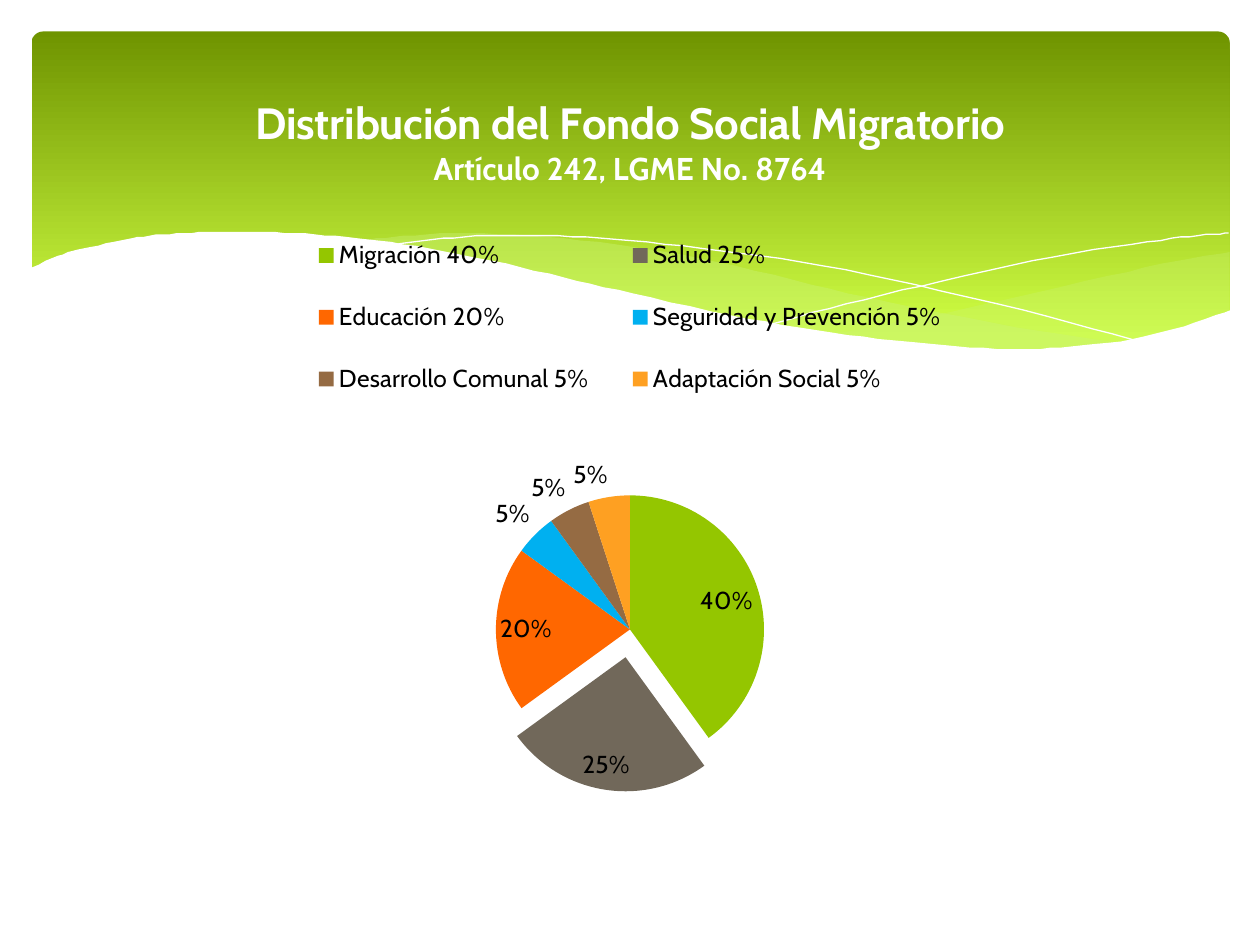
from dataclasses import dataclass

from lxml import etree
from pptx import Presentation
from pptx import util as u
from pptx.chart.data import CategoryChartData
from pptx.dml.color import RGBColor
from pptx.enum import chart as ch
from pptx.enum import shapes
from pptx.oxml import parse_xml
from pptx.oxml.ns import nsdecls, qn


@dataclass(frozen=True)
class Theme:
    """Colours, font and type sizes of the slide."""
    font: str = "Cabin"
    dark: str = "6F9400"
    lime: str = "D0FF44"
    pale: str = "CAF278"
    white: str = "FFFFFF"
    black: str = "000000"
    pie: tuple = ("94C600", "71685A", "FF6700", "00B0F0", "956B43", "FEA022")
    head: int = 25
    sub: int = 18
    label: int = 14
    base: int = 10


def px(n):
    """Turn px, a hundred to the inch, into EMU."""
    return u.Emu(n * 9144)


def rgb(code):
    """Turn a hex code into a colour."""
    return RGBColor.from_string(code)


def curve(knots, steps=5):
    """Return points of a smooth curve through the knots."""
    ends = [knots[0], *knots, knots[-1]]
    dots = [knots[0]]
    for a, b, c, d in zip(ends, ends[1:], ends[2:], ends[3:]):
        for i in range(1, steps + 1):
            t = i / steps
            dots.append(tuple(
                (2 * q + (r - p) * t + (2 * p - 5 * q + 4 * r - s) * t ** 2
                 + (3 * q - p - 3 * r + s) * t ** 3) / 2
                for p, q, r, s in zip(a, b, c, d)))
    return dots


class Deck:
    """Holds the theme and the current slide."""

    def __init__(self, theme):
        """Open a deck with one blank slide."""
        self.theme = theme
        self.prs = Presentation()
        self.prs.slide_width, self.prs.slide_height = px(1000), px(750)
        self.slide = self.prs.slides.add_slide(self.prs.slide_layouts[6])

    def banner(self, x, y, w, h):
        """Add the rounded gradient band."""
        box = self.slide.shapes.add_shape(
            shapes.MSO_SHAPE.ROUNDED_RECTANGLE, px(x), px(y), px(w), px(h))
        box.shadow.inherit = False
        box.adjustments[0] = 0.034
        box.line.fill.background()
        box.fill.gradient()
        box.fill.gradient_angle = 270
        looks = ((0, self.theme.dark), (0.9, self.theme.lime))
        for stop, (place, code) in zip(box.fill.gradient_stops, looks):
            stop.position = place
            stop.color.rgb = rgb(code)

    def trace(self, parts, close):
        """Draw an outline made of smooth parts."""
        dots = [dot for part in parts for dot in curve(part)]
        pen = self.slide.shapes.build_freeform(*dots[0], scale=px(1))
        pen.add_line_segments(dots[1:], close=close)
        form = pen.convert_to_shape()
        form.shadow.inherit = False
        return form

    def wave(self, *parts, fill, alpha=100):
        """Add a filled wave."""
        form = self.trace(parts, True)
        form.line.fill.background()
        form.fill.solid()
        form.fill.fore_color.rgb = rgb(fill)
        if alpha < 100:
            tone = form.fill._xPr.find(".//" + qn("a:srgbClr"))
            etree.SubElement(tone, qn("a:alpha"), val=str(alpha * 1000))

    def strand(self, knots):
        """Add a white hairline."""
        form = self.trace([knots], False)
        form.fill.background()
        form.line.color.rgb = rgb(self.theme.white)
        form.line.width = u.Pt(0)

    def title(self, chart, lines):
        """Write the chart title, one paragraph a line."""
        frame = chart.chart_title.text_frame
        for i, (words, size) in enumerate(lines):
            para = frame.paragraphs[0] if i == 0 else frame.add_paragraph()
            run = para.add_run()
            run.text = words
            run.font.size = u.Pt(size)
            run.font.bold = True
            run.font.name = self.theme.font
            run.font.color.rgb = rgb(self.theme.white)

    def place(self, node, x, y, w, h, inner=False):
        """Give a chart part a fixed place, in shares of the chart."""
        for old in node.findall(qn("c:layout")):
            node.remove(old)
        tags = '<c:layoutTarget val="inner"/>' if inner else ""
        tags += '<c:xMode val="edge"/><c:yMode val="edge"/>'
        tags += "".join(f'<c:{k} val="{v}"/>' for k, v in zip("xywh", (x, y, w, h)))
        box = parse_xml(f'<c:layout {nsdecls("c")}><c:manualLayout>{tags}'
                        "</c:manualLayout></c:layout>")
        node.insert(0 if inner else 1, box)

    def pie(self, x, y, w, h, shares, lines, apart):
        """Add the pie with its title, legend and labels."""
        look = self.theme
        data = CategoryChartData(number_format="0")
        data.categories = [f"{name} {share}%" for name, share in shares]
        data.add_series("Series 1", [share for _, share in shares])
        chart = self.slide.shapes.add_chart(
            ch.XL_CHART_TYPE.PIE, px(x), px(y), px(w), px(h), data).chart
        chart.font.name = look.font
        chart.font.size = u.Pt(look.base)
        chart.font.color.rgb = rgb(look.black)
        self.title(chart, lines)
        chart.has_legend = True
        chart.legend.position = ch.XL_LEGEND_POSITION.TOP
        chart.legend.include_in_layout = False
        chart.legend.font.size = u.Pt(look.label)
        self.place(chart.legend._element, 0.16, 0.18, 0.68, 0.28)
        plot = chart.plots[0]
        plot.vary_by_categories = True
        self.place(plot._element.getparent(), 0, 0.55, 1, 0.346, inner=True)
        plot.has_data_labels = True
        tags = plot.data_labels
        tags.show_value, tags.show_percentage = False, True
        tags.number_format, tags.number_format_is_linked = "0%", False
        tags.position = ch.XL_LABEL_POSITION.BEST_FIT
        tags.font.size = u.Pt(look.label)
        ser = plot.series[0]
        for i, code in enumerate(look.pie):
            fill = ser.points[i].format.fill
            fill.solid()
            fill.fore_color.rgb = rgb(code)
        slot = ser._element.findall(qn("c:dPt"))[apart]
        push = parse_xml(f'<c:explosion {nsdecls("c")} val="21"/>')
        slot.find(qn("c:spPr")).addprevious(push)


def main():
    """Build the slide."""
    look = Theme()
    deck = Deck(look)
    deck.banner(25, 25, 951, 270)
    deck.wave([(976, 200), (935, 207), (861, 223), (753, 248), (661, 265)],
              [(661, 265), (719, 271), (781, 277), (835, 277), (881, 273),
               (928, 263), (976, 247)], fill=look.pale, alpha=29)
    deck.wave([(893, 273), (807, 260), (706, 240), (629, 222), (555, 205),
               (489, 194), (420, 187), (361, 185), (313, 188), (286, 191)],
              [(286, 191), (362, 203), (449, 222), (530, 240), (618, 258),
               (695, 270), (761, 277), (818, 278), (857, 277), (893, 273)],
              fill=look.pale, alpha=40)
    deck.strand([(309, 195), (344, 190), (387, 187), (433, 187), (489, 190),
                 (556, 197), (636, 208), (727, 226), (831, 251), (907, 272)])
    deck.strand([(613, 257), (672, 241), (748, 223), (836, 204), (910, 192),
                 (951, 187), (975, 185)])
    deck.wave([(977, 246), (940, 259), (899, 269), (850, 275), (809, 277),
               (761, 275), (708, 270), (648, 262), (579, 250), (503, 233),
               (447, 220), (391, 207), (340, 197), (292, 190), (250, 186),
               (211, 184), (177, 184), (146, 185), (119, 187), (95, 191),
               (67, 197), (46, 203), (23, 213)],
              [(23, 329), (977, 329)], fill=look.white)
    deck.pie(95, 55, 810, 615,
             [("Migración", 40), ("Salud", 25), ("Educación", 20),
              ("Seguridad y Prevención", 5), ("Desarrollo Comunal", 5),
              ("Adaptación Social", 5)],
             [("Distribución del Fondo Social Migratorio", look.head),
              ("Artículo 242, LGME No. 8764", look.sub)], apart=1)
    deck.prs.save("out.pptx")


if __name__ == "__main__":
    main()
